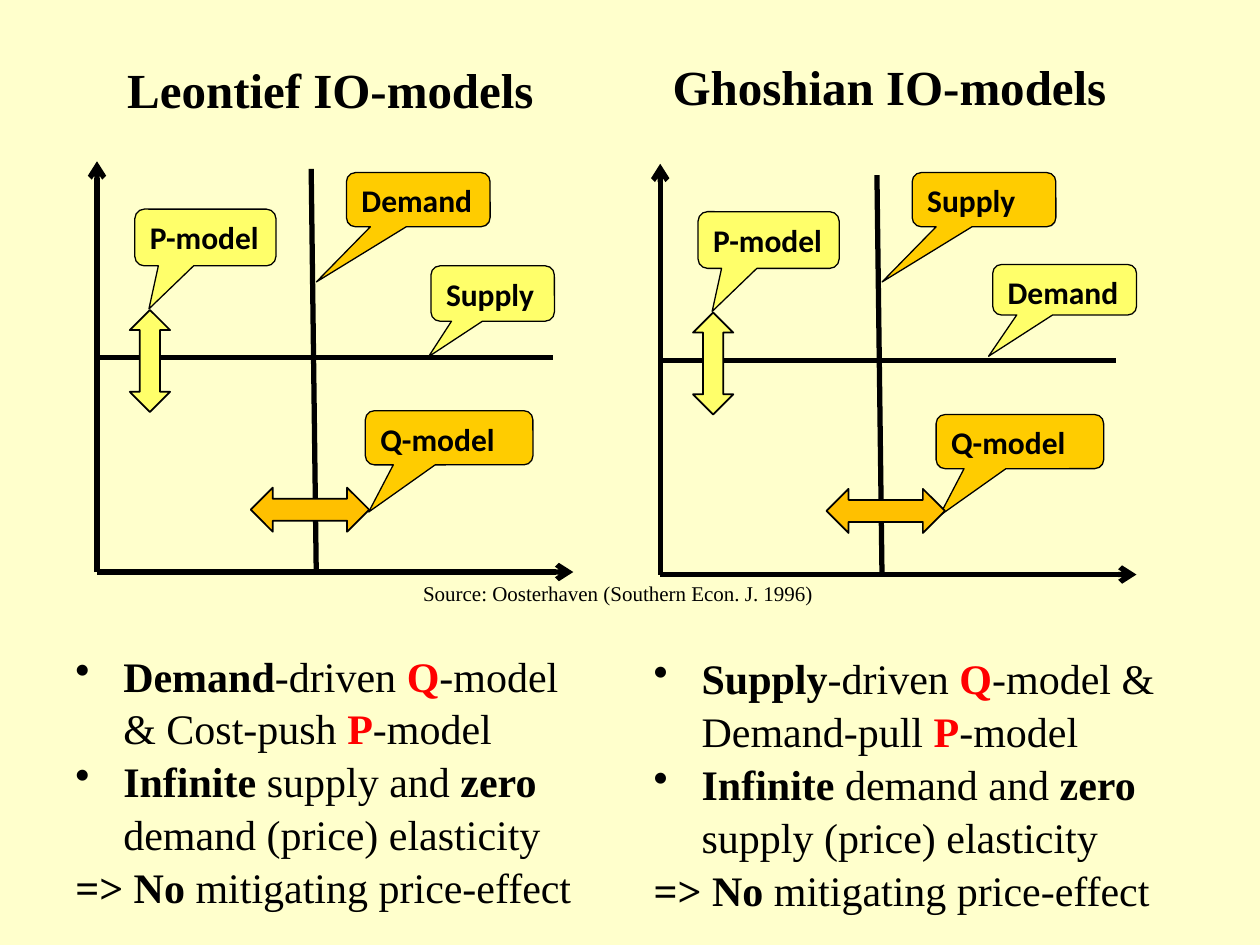
"""Build a slide that compares Leontief and Ghoshian input-output models."""
import pptx
import pptx.util
import pptx.oxml.ns
import pptx.dml.color
import pptx.enum.text
import pptx.enum.shapes
import lxml.etree
import dataclasses

Inches = pptx.util.Inches
Pt = pptx.util.Pt
SHAPE = pptx.enum.shapes.MSO_SHAPE
ANCHOR = pptx.enum.text.MSO_ANCHOR


@dataclasses.dataclass(frozen=True)
class Theme:
    back: str = "FFFFCC"
    ink: str = "000000"
    red: str = "FF0000"
    lemon: str = "FFFF6A"
    gold: str = "FFCC00"
    amber: str = "FFC000"
    serif: str = "Times New Roman"
    sans: str = "Calibri"
    title: int = 28
    body: int = 24
    label: int = 18
    source: int = 12
    axis: float = 3
    edge: float = 1
    thin: float = 0.75


THEME = Theme()
SOURCE = "Source: Oosterhaven (Southern Econ. J. 1996)"
PANELS = [
    {
        "title": ("Leontief IO-models", (0.91, 0.31, 3.65, 0.79)),
        "origin": (0.77, 4.54),
        "upright": (2.47, 1.34),
        "swing": (1.99, 3.87),
        "notes": [
            ("Supply", (3.42, 2.11, 0.98, 0.44), THEME.lemon, (-0.52, 1.14)),
            ("Demand", (2.75, 1.37, 1.14, 0.43), THEME.gold, (-0.71, 1.52)),
            ("Q-model", (2.9, 3.26, 1.33, 0.43), THEME.gold, (-0.48, 1.37)),
        ],
        "body": (0.5, 5.09, 4.32, 2.12),
        "words": ("Demand", "Cost-push", "supply", "demand"),
    },
    {
        "title": ("Ghoshian IO-models", (5.24, 0.29, 3.77, 0.79)),
        "origin": (5.24, 4.56),
        "upright": (6.96, 1.39),
        "swing": (6.56, 3.88),
        "notes": [
            ("Demand", (7.88, 2.1, 1.14, 0.4), THEME.lemon, (-0.53, 1.32)),
            ("Supply", (7.24, 1.37, 1.14, 0.43), THEME.gold, (-0.71, 1.52)),
            ("Q-model", (7.43, 3.29, 1.33, 0.43), THEME.gold, (-0.48, 1.37)),
        ],
        "body": (5.09, 5.11, 4.3, 2.12),
        "words": ("Supply", "Demand-pull", "demand", "supply"),
    },
]


def points(driver, push, endless, fixed):
    return [
        [(driver, "bold"), ("-driven ", ""), ("Q", "red"),
         (f"-model & {push} ", ""), ("P", "red"), ("-model", "")],
        [("Infinite ", "bold"), (f"{endless} and ", ""), ("zero ", "bold"),
         (f"{fixed} (price) elasticity", "")],
        [("=> No ", "bold"), ("mitigating price-effect", "")],
    ]


def tint(code):
    return pptx.dml.color.RGBColor.from_string(code)


def place(shape, box):
    shape.left, shape.top, shape.width, shape.height = map(Inches, box)


def write(shape, lines, size, font=THEME.serif, anchor=ANCHOR.TOP,
          wrap=True, after=0, pitch=None, dots=0):
    frame = shape.text_frame
    frame.word_wrap = wrap
    frame.vertical_anchor = anchor
    for row, runs in enumerate(lines):
        para = frame.paragraphs[0] if row == 0 else frame.add_paragraph()
        para.alignment = pptx.enum.text.PP_ALIGN.LEFT
        para.space_after = Pt(after)
        if pitch:
            para.line_spacing = pitch
        if row < dots:
            props = para._p.get_or_add_pPr()
            props.set("marL", str(Inches(0.38)))
            props.set("indent", str(-Inches(0.38)))
            mark = lxml.etree.SubElement(props, pptx.oxml.ns.qn("a:buChar"))
            mark.set("char", "•")
        for text, style in runs:
            run = para.add_run()
            run.text = text
            run.font.name = font
            run.font.size = Pt(size)
            run.font.bold = style != ""
            run.font.color.rgb = tint(THEME.red if style == "red" else THEME.ink)


def draw_line(slide, start, end, arrow=False):
    kind = pptx.enum.shapes.MSO_CONNECTOR.STRAIGHT
    line = slide.shapes.add_connector(kind, *map(Inches, start + end))
    line.line.color.rgb = tint(THEME.ink)
    line.line.width = Pt(THEME.axis)
    if arrow:
        tail = lxml.etree.SubElement(line.line._get_or_add_ln(),
                                     pptx.oxml.ns.qn("a:tailEnd"))
        tail.set("type", "arrow")
    lxml.etree.SubElement(line._element.spPr, pptx.oxml.ns.qn("a:effectLst"))


def draw_shape(slide, kind, box, fill, width):
    shape = slide.shapes.add_shape(kind, *map(Inches, box))
    shape.shadow.inherit = False
    shape.fill.solid()
    shape.fill.fore_color.rgb = tint(fill)
    shape.line.color.rgb = tint(THEME.ink)
    shape.line.width = Pt(width)
    return shape


def draw_note(slide, text, box, fill, tip):
    note = draw_shape(slide, SHAPE.ROUNDED_RECTANGULAR_CALLOUT, box, fill, THEME.thin)
    note.adjustments[0], note.adjustments[1] = tip
    write(note, [[(text, "bold")]], THEME.label, font=THEME.sans, after=10)


def draw_chart(slide, panel):
    x, y = panel["origin"]
    left, top = panel["upright"]
    draw_line(slide, (x, y), (x + 3.78, y), arrow=True)
    draw_line(slide, (x, y), (x, y - 3.26), arrow=True)
    draw_line(slide, (left, top), (left + 0.04, y))
    draw_line(slide, (x, y - 1.7), (x + 3.62, y - 1.7))
    for note in panel["notes"]:
        draw_note(slide, *note)
    draw_shape(slide, SHAPE.UP_DOWN_ARROW, (x + 0.26, y - 2.08, 0.32, 0.81),
               THEME.lemon, THEME.edge)
    draw_note(slide, "P-model", (x + 0.3, y - 2.88, 1.12, 0.45),
              THEME.lemon, (-0.4, 1.26))
    draw_shape(slide, SHAPE.LEFT_RIGHT_ARROW, panel["swing"] + (0.94, 0.35),
               THEME.amber, THEME.edge)


def add_box(slide, box):
    return slide.shapes.add_textbox(*map(Inches, box))


def main():
    deck = pptx.Presentation()
    deck.slide_width, deck.slide_height = Inches(10), Inches(7.5)
    slide = deck.slides.add_slide(deck.slide_layouts.get_by_name("Title Only"))
    slide.background.fill.solid()
    slide.background.fill.fore_color.rgb = tint(THEME.back)
    for spot, panel in enumerate(PANELS):
        text, box = panel["title"]
        head = slide.shapes.title if spot == 0 else add_box(slide, box)
        place(head, box)
        write(head, [[(text, "bold")]], THEME.title, anchor=ANCHOR.MIDDLE)
        draw_chart(slide, panel)
        write(add_box(slide, panel["body"]), points(*panel["words"]),
              THEME.body, pitch=1.05, dots=2)
    write(add_box(slide, (3.26, 4.56, 3.3, 0.3)), [[(SOURCE, "")]],
          THEME.source, wrap=False)
    deck.save("out.pptx")


if __name__ == "__main__":
    main()
